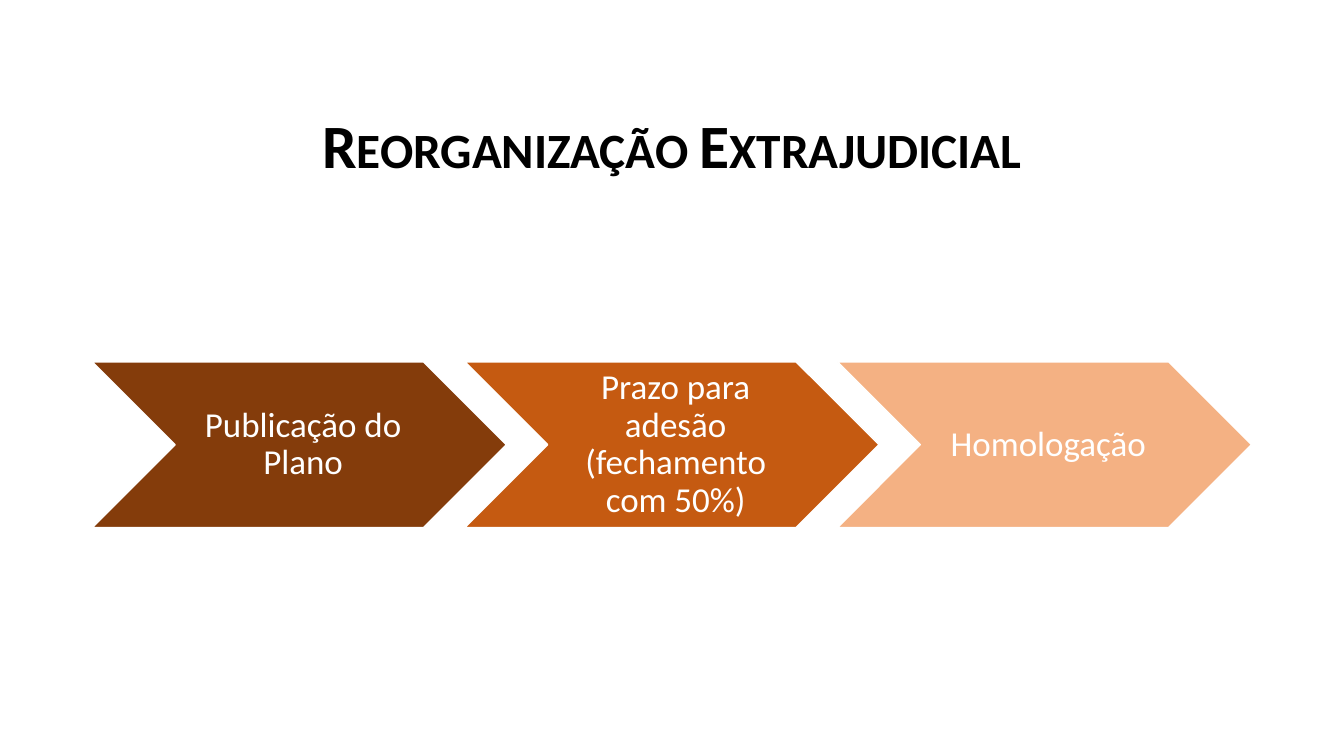
from dataclasses import dataclass

from pptx import Presentation
from pptx.dml.color import RGBColor
from pptx.enum.shapes import MSO_SHAPE
from pptx.enum.text import MSO_ANCHOR, PP_ALIGN
from pptx.util import Pt


@dataclass(frozen=True)
class Theme:
    font: str = "Calibri"
    title_size: int = 44
    step_size: int = 25
    title_color: str = "000000"
    step_color: str = "FFFFFF"
    outline: str = "FFFFFF"
    step_fills: tuple = ("843C0B", "C55A11", "F4B183")


THEME = Theme()
STEPS = ("Publicação do Plano", "Prazo para adesão (fechamento com 50%)", "Homologação")


def set_text(tf, text, size, color, bold=False):
    tf.word_wrap = True
    tf.text = text
    p = tf.paragraphs[0]
    p.alignment = PP_ALIGN.CENTER
    p.line_spacing = 0.9
    r = p.runs[0]
    r.font.name = THEME.font
    r.font.size = Pt(size)
    r.font.bold = bold
    r.font.color.rgb = RGBColor.from_string(color)
    return r


def add_title(s, text, left, top, width, height):
    tf = s.shapes.add_textbox(Pt(left), Pt(top), Pt(width), Pt(height)).text_frame
    tf.vertical_anchor = MSO_ANCHOR.BOTTOM
    r = set_text(tf, text, THEME.title_size, THEME.title_color, bold=True)
    r.font._element.set("cap", "small")


def add_process(s, steps, left, top, width):
    """Fill the width with chevrons, each starting at 90% of the one before."""
    pitch_ratio, height_ratio = 0.9, 0.4
    step_width = width / (1 + pitch_ratio * (len(steps) - 1))
    for i, (text, fill) in enumerate(zip(steps, THEME.step_fills)):
        sp = s.shapes.add_shape(
            MSO_SHAPE.CHEVRON,
            Pt(left + i * pitch_ratio * step_width), Pt(top),
            Pt(step_width), Pt(height_ratio * step_width))
        sp.shadow.inherit = False
        sp.fill.solid()
        sp.fill.fore_color.rgb = RGBColor.from_string(fill)
        sp.line.color.rgb = RGBColor.from_string(THEME.outline)
        sp.line.width = Pt(1)
        tf = sp.text_frame
        tf.margin_left = Pt(8)
        tf.margin_right = tf.margin_top = tf.margin_bottom = Pt(2.67)
        tf.vertical_anchor = MSO_ANCHOR.MIDDLE
        set_text(tf, text, THEME.step_size, THEME.step_color)


def main():
    prs = Presentation()
    prs.slide_width, prs.slide_height = Pt(960), Pt(540)
    s = prs.slides.add_slide(prs.slide_layouts[6])
    add_title(s, "Reorganização Extrajudicial", 66, 28.8, 828, 104.4)
    add_process(s, STEPS, 66, 258.5, 828)
    prs.save("out.pptx")


if __name__ == "__main__":
    main()
